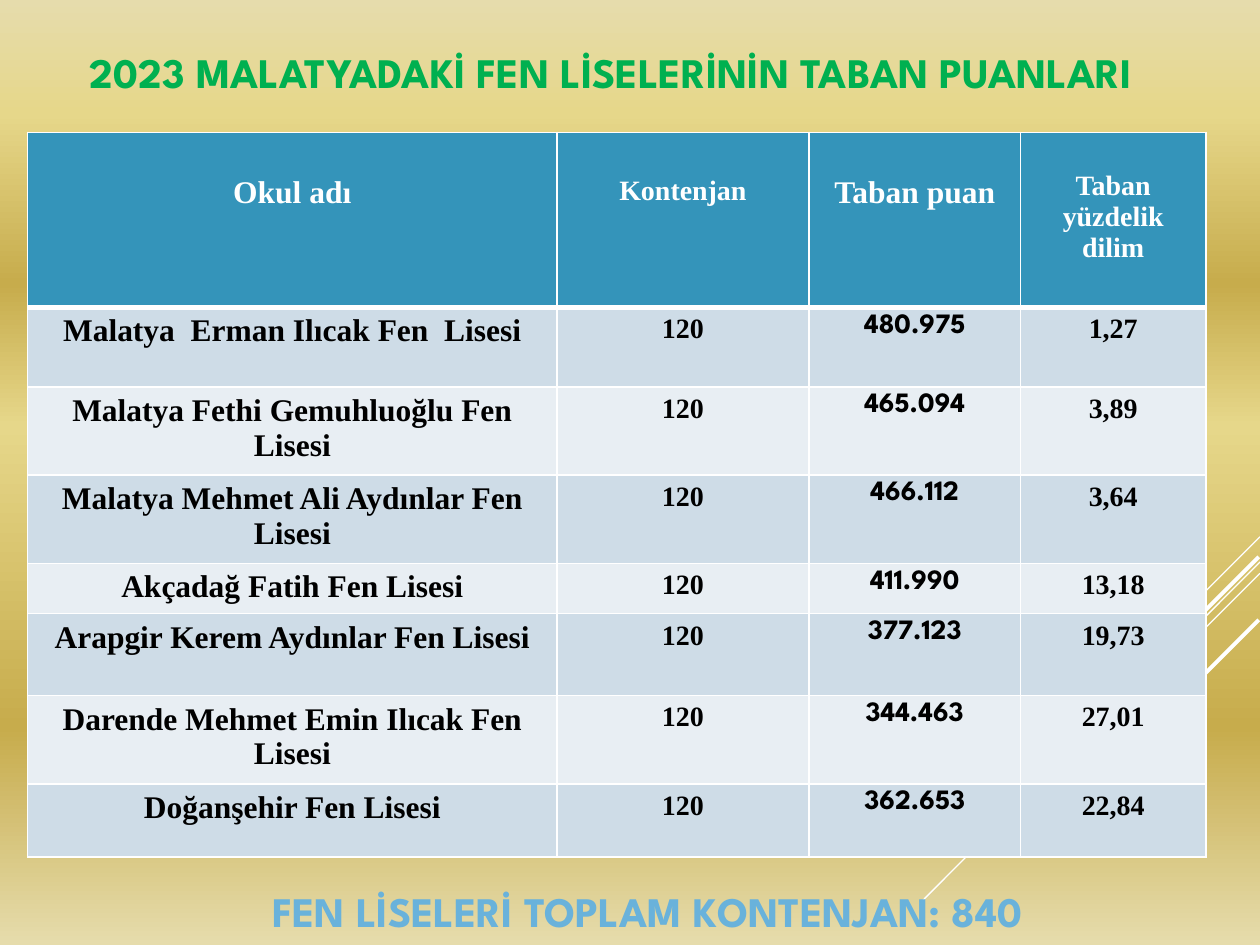
from copy import deepcopy

from lxml.etree import SubElement
from pptx import Presentation
from pptx.dml.color import RGBColor
from pptx.enum.shapes import MSO_CONNECTOR
from pptx.enum.text import MSO_ANCHOR, PP_ALIGN
from pptx.oxml.ns import qn
from pptx.util import Inches, Pt

COLORS = {
    "white": "FFFFFF", "black": "000000", "title": "00B050", "total": "69B2DB",
    "outline": "246781", "header": "3494BA", "odd": "CEDCE7", "even": "E8EEF3",
    "pale": "E6DCAC", "light": "E6D78A", "gold": "C7AC4C",
}
SERIF, DISPLAY = "Times New Roman", "League Spartan"
GRADIENT = [(0, "pale"), (12, "light"), (30, "gold"), (45, "light"), (77, "gold"), (100, "pale")]
RAYS = [
    (10, 4.26, 9.17, 5.09, 0.75), (10, 4.46, 7.3, 7.17, 0.75), (10, 4.55, 8.28, 6.27, 0.75),
    (9.99, 4.42, 8.42, 5.99, 2.25), (9.99, 4.92, 8.85, 6.06, 2.25),
]
COLUMN_WIDTHS = [4.2, 2, 1.68, 1.47]
ROW_HEIGHTS = [1.39, 0.63, 0.65, 0.68, 0.39, 0.65, 0.68, 0.58]
HEADERS = [("Okul adı", 18, 0.34), ("Kontenjan", 16, 0.34),
           ("Taban puan", 18, 0.34), ("Taban yüzdelik dilim", 16, 0.3)]
BODY_STYLES = [(18, SERIF), (16, SERIF), (16, DISPLAY), (16, SERIF)]
SCHOOLS = [
    ("Malatya  Erman Ilıcak Fen  Lisesi", "120", "480.975", "1,27"),
    ("Malatya Fethi Gemuhluoğlu Fen Lisesi", "120", "465.094", "3,89"),
    ("Malatya Mehmet Ali Aydınlar Fen Lisesi", "120", "466.112", "3,64"),
    ("Akçadağ Fatih Fen Lisesi", "120", "411.990", "13,18"),
    ("Arapgir Kerem Aydınlar Fen Lisesi", "120", "377.123", "19,73"),
    ("Darende Mehmet Emin Ilıcak Fen Lisesi", "120", "344.463", "27,01"),
    ("Doğanşehir Fen Lisesi", "120", "362.653", "22,84"),
]


def rgb(name):
    """Return the named colour."""
    return RGBColor.from_string(COLORS[name])


def set_background(s):
    """Fill the slide with a top-to-bottom gold gradient."""
    fill = s.background.fill
    fill.gradient()
    fill.gradient_angle = 270
    stops = s.background._cSld.find(".//" + qn("a:gsLst"))
    template = deepcopy(stops[0])
    for stop in list(stops):
        stops.remove(stop)
    for position, name in GRADIENT:
        stop = deepcopy(template)
        stop.set("pos", str(position * 1000))
        for child in list(stop):
            stop.remove(child)
        SubElement(stop, qn("a:srgbClr"), val=COLORS[name])
        stops.append(stop)


def add_ray(s, x1, y1, x2, y2, width):
    """Draw one white diagonal line."""
    ray = s.shapes.add_connector(
        MSO_CONNECTOR.STRAIGHT, Inches(x1), Inches(y1), Inches(x2), Inches(y2))
    ray.line.color.rgb = rgb("white")
    ray.line.width = Pt(width)
    SubElement(ray._element.spPr, qn("a:effectLst"))


def add_run(tf, text, size, font, color):
    """Write one centred bold run into the first paragraph."""
    p = tf.paragraphs[0]
    p.alignment = PP_ALIGN.CENTER
    r = p.add_run()
    r.text = text
    r.font.size = Pt(size)
    r.font.name = font
    r.font.bold = True
    r.font.color.rgb = rgb(color)
    return r


def add_heading(s, left, top, text, color):
    """Add a one-line display text and return its run."""
    sp = s.shapes.add_textbox(Inches(left), Inches(top), Inches(9.3), Inches(0.7))
    tf = sp.text_frame
    tf.word_wrap = True
    tf.vertical_anchor = MSO_ANCHOR.MIDDLE
    return add_run(tf, text, 24, DISPLAY, color)


def add_total(s):
    """Add the outlined total line, indented from the left."""
    r = add_heading(s, 0.18, 6.88, " FEN LİSELERİ TOPLAM KONTENJAN: 840", "total")
    r._r.getparent().get_or_add_pPr().set("marL", str(Inches(0.53)))
    rPr = r._r.get_or_add_rPr()
    ln = SubElement(rPr, qn("a:ln"), w=str(Pt(0.5)))
    SubElement(SubElement(ln, qn("a:solidFill")), qn("a:srgbClr"), val=COLORS["outline"])
    rPr.insert(0, ln)


def style_cell(cell, fill, top=1, bottom=1):
    """Give a cell its fill and white borders."""
    tcPr = cell._tc.get_or_add_tcPr()
    for side, width in (("L", 1), ("R", 1), ("T", top), ("B", bottom)):
        ln = SubElement(tcPr, qn("a:ln" + side), w=str(Pt(width)))
        SubElement(SubElement(ln, qn("a:solidFill")), qn("a:srgbClr"), val=COLORS["white"])
    cell.fill.solid()
    cell.fill.fore_color.rgb = rgb(fill)


def add_scores_table(s):
    """Add the table of schools, quotas and base scores."""
    table = s.shapes.add_table(
        len(ROW_HEIGHTS), len(COLUMN_WIDTHS), Inches(0.22), Inches(1.05),
        Inches(sum(COLUMN_WIDTHS)), Inches(sum(ROW_HEIGHTS))).table
    for column, width in zip(table.columns, COLUMN_WIDTHS):
        column.width = Inches(width)
    for row, height in zip(table.rows, ROW_HEIGHTS):
        row.height = Inches(height)
    for j, (text, size, margin) in enumerate(HEADERS):
        cell = table.cell(0, j)
        style_cell(cell, "header", bottom=3)
        cell.margin_top = Inches(margin)
        add_run(cell.text_frame, text, size, SERIF, "white")
    for i, school in enumerate(SCHOOLS, start=1):
        for j, (text, (size, font)) in enumerate(zip(school, BODY_STYLES)):
            cell = table.cell(i, j)
            style_cell(cell, "odd" if i % 2 else "even", top=3 if i == 1 else 1)
            add_run(cell.text_frame, text, size, font, "black")


def main():
    """Build and save the slide."""
    prs = Presentation()
    prs.slide_width, prs.slide_height = Inches(10), Inches(7.5)
    s = prs.slides.add_slide(prs.slide_layouts[6])
    set_background(s)
    for ray in RAYS:
        add_ray(s, *ray)
    add_heading(s, 0.2, 0.22, "2023 MALATYADAKİ FEN LİSELERİNİN TABAN PUANLARI", "title")
    add_scores_table(s)
    add_total(s)
    prs.save("out.pptx")


if __name__ == "__main__":
    main()
